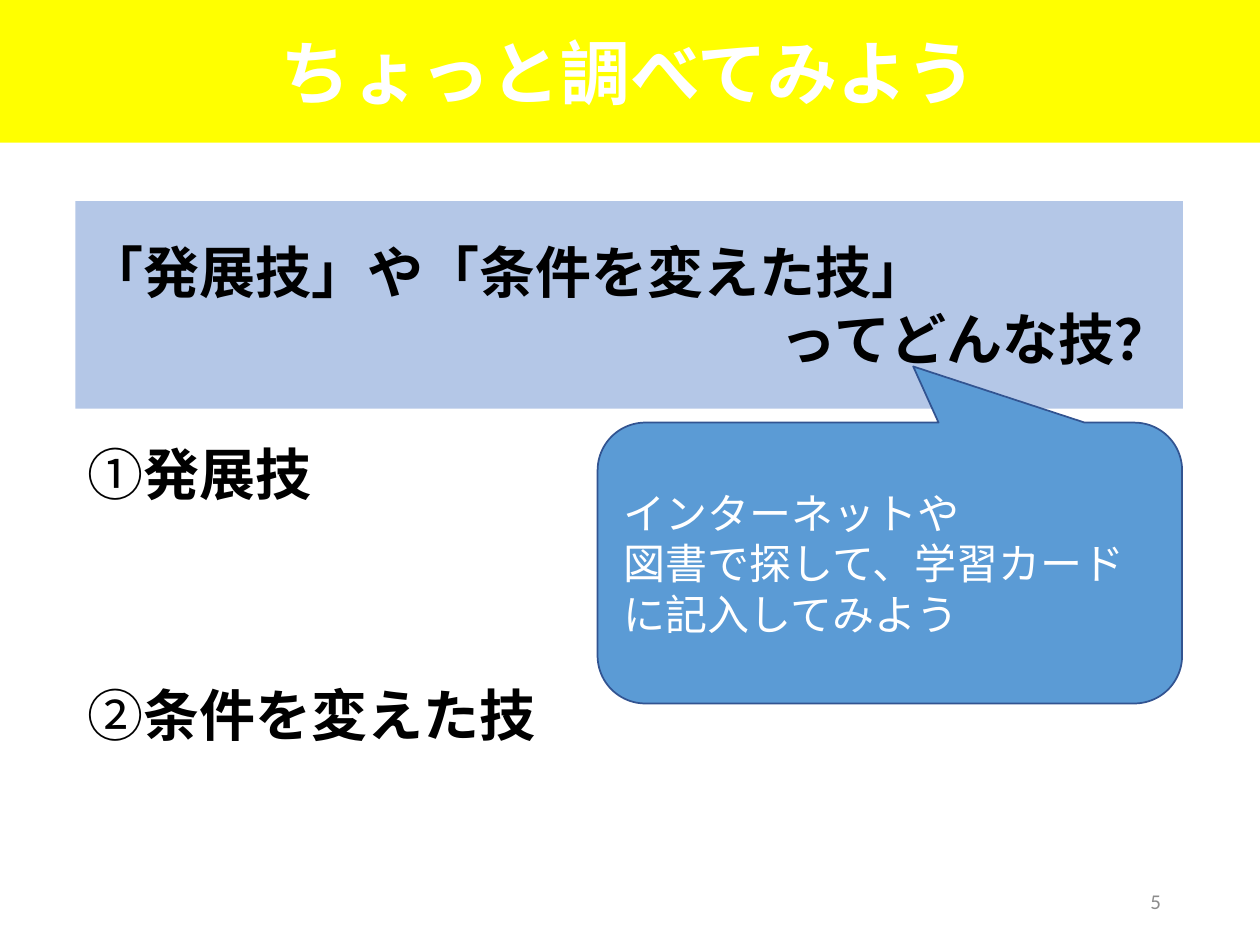
import pptx
import pptx.util
import pptx.dml.color
import pptx.enum.shapes
import pptx.enum.text
import pptx.oxml.ns
import lxml.etree

Pt = pptx.util.Pt
Kind = pptx.enum.shapes.MSO_SHAPE
Align = pptx.enum.text.PP_ALIGN
Anchor = pptx.enum.text.MSO_ANCHOR
LATIN, ASIAN = "Calibri", "Noto Sans CJK JP"
HUES = {"banner": "FFFF00", "panel": "B4C7E7", "bubble": "5B9BD5",
        "edge": "325491", "white": "FFFFFF", "black": "000000", "gray": "8C8C8C"}


def tint(name):
    return pptx.dml.color.RGBColor.from_string(HUES[name])


def write(shape, rows, size, hue, font=LATIN):
    """Fill a shape with rows of (alignment, [(text, bold), ...])."""
    frame = shape.text_frame
    frame.word_wrap = True
    frame.vertical_anchor = Anchor.MIDDLE
    for i, (align, parts) in enumerate(rows):
        para = frame.add_paragraph() if i else frame.paragraphs[0]
        para.alignment = align
        for text, bold in parts:
            run = para.add_run()
            run.text = text
            run.font.size = Pt(size)
            run.font.bold = bold
            run.font.name = font
            run.font.color.rgb = tint(hue)
            east = lxml.etree.SubElement(run.font._element, pptx.oxml.ns.qn("a:ea"))
            east.set("typeface", ASIAN)


deck = pptx.Presentation()
deck.slide_width, deck.slide_height = Pt(720), Pt(540)
slide = deck.slides.add_slide(deck.slide_layouts[6])

# Shapes from back to front: kind, box, fill, rows, size, text colour, font
parts = [
    (Kind.RECTANGLE, (-1.5, 0, 721.5, 81.5), "banner",
     [(Align.CENTER, [("ちょっと調べてみよう", True)])], 40, "white", ASIAN),
    (Kind.RECTANGLE, (43, 115, 633, 118.5), "panel",
     [(Align.LEFT, [("「発展技」や「条件を変えた技」", True)]),
      (Align.RIGHT, [("ってどんな技？", True)])], 32, "black", LATIN),
    (Kind.RECTANGLE, (43, 246.5, 666, 48), "white",
     [(Align.LEFT, [("①", False), ("発展技", True)])], 32, "black", LATIN),
    (Kind.RECTANGLE, (43, 384, 628, 48), "white",
     [(Align.LEFT, [("②", False), ("条件を変えた技", True)])], 32, "black", LATIN),
    (Kind.ROUNDED_RECTANGULAR_CALLOUT, (341.5, 241.5, 334, 160.5), "bubble",
     [(Align.LEFT, [("インターネットや", False)]),
      (Align.LEFT, [("図書で探して、学習カードに記入してみよう", False)])],
     24, "white", LATIN),
]
shapes = []
for kind, box, fill, rows, size, hue, font in parts:
    shape = slide.shapes.add_shape(kind, *map(Pt, box))
    shape.shadow.inherit = False
    shape.fill.solid()
    shape.fill.fore_color.rgb = tint(fill)
    shape.line.fill.background()
    write(shape, rows, size, hue, font)
    shapes.append(shape)

# Banner margins
frame = shapes[0].text_frame
frame.word_wrap = False
frame.margin_left = frame.margin_right = Pt(5)
frame.margin_top = frame.margin_bottom = Pt(3)

# Speech bubble outline and tail
bubble = shapes[-1]
bubble.line.color.rgb = tint("edge")
bubble.line.width = Pt(1)
for i, value in enumerate((0.04, -0.7, 0.17)):
    bubble.adjustments[i] = value

# Page number
page = slide.shapes.add_textbox(Pt(508.5), Pt(500.5), Pt(162), Pt(28.75))
write(page, [(Align.RIGHT, [("5", False)])], 12, "gray")

deck.save("out.pptx")
